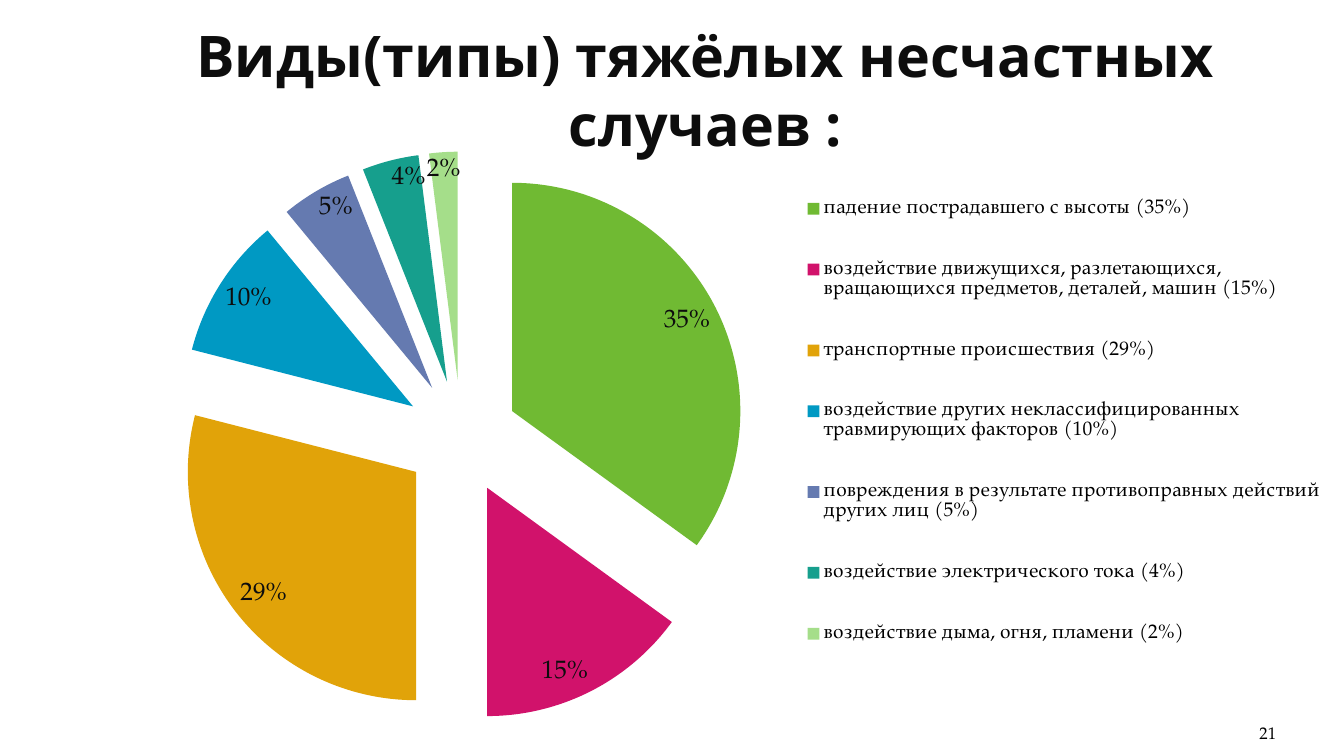
"""Build a slide with an exploded pie chart of severe accident types."""
from lxml import etree
from pptx import Presentation
from pptx import util as u
from pptx.chart import data as chart_data
from pptx.dml import color
from pptx.enum import chart as ch
from pptx.enum import text
from pptx.oxml import ns

TITLE = "Виды(типы) тяжёлых несчастных случаев :"
PAGE_NUMBER = "21"
ACCIDENTS = [
    ("падение пострадавшего с высоты (35%)", 0.35, "70BA33"),
    ("воздействие движущихся, разлетающихся, вращающихся предметов, деталей, машин (15%)", 0.15, "D1126B"),
    ("транспортные происшествия (29%)", 0.29, "E1A309"),
    ("воздействие других неклассифицированных травмирующих факторов (10%)", 0.10, "0099C3"),
    ("повреждения в результате противоправных действий других лиц (5%)", 0.05, "657AB0"),
    ("воздействие электрического тока (4%)", 0.04, "169F8D"),
    ("воздействие дыма, огня, пламени (2%)", 0.02, "A5DE8A"),
]
THEME = {
    "heading_font": "Open Sans", "body_font": "TeX Gyre Pagella",
    "heading": "0D0D0D", "body": "000000",
    "title_size": 41, "label_size": 18, "legend_size": 14, "number_size": 12,
}
SLIDE_SIZE = (960, 540)
TITLE_BOX = (96, 9.36, 816, 108)
CHART_BOX = (81.5, 77, 870, 448)
NUMBER_BOX = (831.6, 505.4, 80, 28.8)
PIE_AREA = {"x": 0.05, "y": 0.07, "w": 0.47, "h": 0.91}
LEGEND_AREA = {"x": 0.56, "y": 0.08, "w": 0.44, "h": 0.84}
EXPLOSION = 25


def format_font(font, name, size, rgb, bold=False):
    font.name = name
    font.size = u.Pt(size)
    font.bold = bold
    font.color.rgb = color.RGBColor.from_string(rgb)


def add_text(slide, content, box, *, name, size, rgb, bold=False, align, anchor, margins):
    shape = slide.shapes.add_textbox(*map(u.Pt, box))
    frame = shape.text_frame
    frame.word_wrap = True
    frame.vertical_anchor = anchor
    frame.margin_left = frame.margin_right = u.Pt(margins[0])
    frame.margin_top = frame.margin_bottom = u.Pt(margins[1])
    paragraph = frame.paragraphs[0]
    paragraph.alignment = align
    run = paragraph.add_run()
    run.text = content
    format_font(run.font, name, size, rgb, bold)


def place(parent, index, area, inner=False):
    for old in parent.findall(ns.qn("c:layout")):
        parent.remove(old)
    layout = etree.Element(ns.qn("c:layout"))
    manual = etree.SubElement(layout, ns.qn("c:manualLayout"))
    settings = [("layoutTarget", "inner")] if inner else []
    settings += [("xMode", "edge"), ("yMode", "edge"), *area.items()]
    for tag, value in settings:
        etree.SubElement(manual, ns.qn(f"c:{tag}")).set("val", str(value))
    parent.insert(index, layout)


def add_pie(slide):
    categories, values, colours = zip(*ACCIDENTS)
    data = chart_data.CategoryChartData(number_format="0%")
    data.categories = categories
    data.add_series("Series 1", values)
    chart = slide.shapes.add_chart(ch.XL_CHART_TYPE.PIE, *map(u.Pt, CHART_BOX), data).chart
    chart.has_title = False
    format_font(chart.font, THEME["body_font"], THEME["label_size"], THEME["body"])

    plot = chart.plots[0]
    plot.vary_by_categories = True
    series = plot.series[0]
    for index, rgb in enumerate(colours):
        fill = series.points[index].format.fill
        fill.solid()
        fill.fore_color.rgb = color.RGBColor.from_string(rgb)
    explosion = etree.Element(ns.qn("c:explosion"))
    explosion.set("val", str(EXPLOSION))
    series._element.find(ns.qn("c:tx")).addnext(explosion)

    plot.has_data_labels = True
    labels = plot.data_labels
    labels.show_value = True
    labels.show_percentage = False
    labels.number_format = "0%"
    labels.number_format_is_linked = False
    labels.position = ch.XL_LABEL_POSITION.INSIDE_END
    format_font(labels.font, THEME["body_font"], THEME["label_size"], THEME["heading"])

    chart.has_legend = True
    legend = chart.legend
    legend.position = ch.XL_LEGEND_POSITION.RIGHT
    legend.include_in_layout = False
    format_font(legend.font, THEME["body_font"], THEME["legend_size"], THEME["body"])
    place(legend._element, 1, LEGEND_AREA)
    place(chart._chartSpace.find(".//" + ns.qn("c:plotArea")), 0, PIE_AREA, inner=True)


def main():
    presentation = Presentation()
    presentation.slide_width, presentation.slide_height = map(u.Pt, SLIDE_SIZE)
    slide = presentation.slides.add_slide(presentation.slide_layouts[6])
    add_text(slide, TITLE, TITLE_BOX, name=THEME["heading_font"], size=THEME["title_size"],
             rgb=THEME["heading"], bold=True, align=text.PP_ALIGN.CENTER,
             anchor=text.MSO_ANCHOR.MIDDLE, margins=(7.2, 3.6))
    add_pie(slide)
    add_text(slide, PAGE_NUMBER, NUMBER_BOX, name=THEME["body_font"], size=THEME["number_size"],
             rgb=THEME["body"], align=text.PP_ALIGN.RIGHT,
             anchor=text.MSO_ANCHOR.BOTTOM, margins=(0, 3.6))
    presentation.save("out.pptx")


if __name__ == "__main__":
    main()
